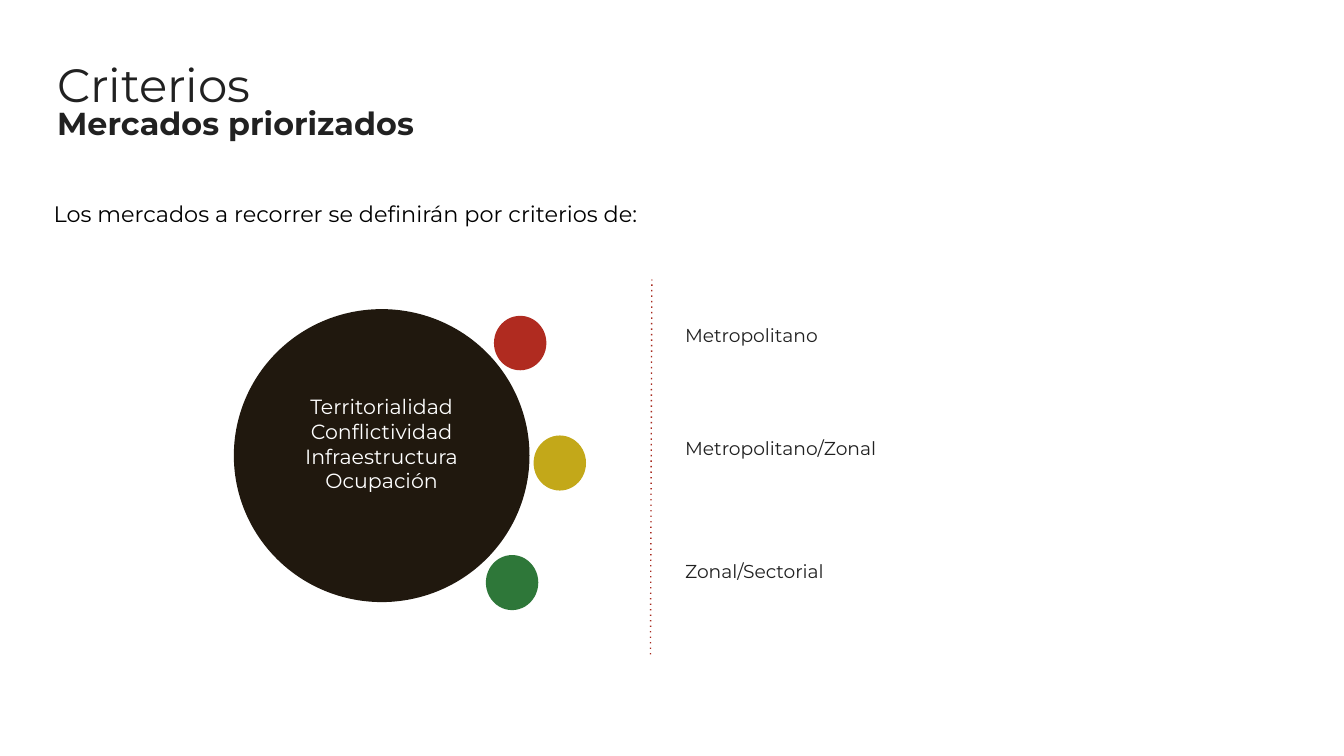
import pptx
import pptx.util
import pptx.dml.color
import pptx.enum.shapes
import pptx.enum.text
import pptx.oxml.ns
from lxml import etree

RGB = pptx.dml.color.RGBColor
INK = RGB(0x21, 0x21, 0x21)
BLACK = RGB(0x00, 0x00, 0x00)
WHITE = RGB(0xFF, 0xFF, 0xFF)
BROWN = RGB(0x20, 0x18, 0x0E)
RED = RGB(0xB0, 0x2B, 0x20)
YELLOW = RGB(0xC3, 0xA8, 0x19)
GREEN = RGB(0x2E, 0x77, 0x39)
RULE = RGB(0xA7, 0x29, 0x1E)
FONT = "Montserrat"
PP_ALIGN = pptx.enum.text.PP_ALIGN
ANCHOR = pptx.enum.text.MSO_ANCHOR
qn = pptx.oxml.ns.qn

prs = pptx.Presentation()
prs.slide_width = pptx.util.Inches(10)
prs.slide_height = prs.slide_width * 9 // 16
CELL = prs.slide_width / 100  # square grid, 100 columns wide


def cells(*counts):
    return [round(n * CELL) for n in counts]


def write(shape, lines, inset, align=PP_ALIGN.LEFT, anchor=ANCHOR.TOP):
    """Fill a shape with one paragraph per (text, size, colour, bold)."""
    tf = shape.text_frame
    tf.word_wrap = True
    tf.auto_size = pptx.enum.text.MSO_AUTO_SIZE.NONE
    tf.vertical_anchor = anchor
    tf.margin_left = tf.margin_right = tf.margin_top = tf.margin_bottom = cells(inset)[0]
    tf.text = "\n".join(line[0] for line in lines)
    for p, (_, size, color, bold) in zip(tf.paragraphs, lines):
        p.alignment = align
        p.font.name = FONT
        p.font.size = pptx.util.Pt(size)
        p.font.color.rgb = color
        p.font.bold = bold
    return tf


s = prs.slides.add_slide(prs.slide_layouts[5])

# Title
title = s.shapes.title
title.left, title.top, title.width, title.height = cells(3, 3.7, 39.7, 8.2)
tf = write(title, [("Criterios", 25, INK, False),
                   ("Mercados priorizados", 17, INK, True)], 1.25)
for p in tf.paragraphs:
    p.line_spacing = 0.8

# Criteria circle with its three level dots
circles = []
for x, y, w, h, color in [(17.4, 23, 22, 21.8, BROWN),
                          (36.75, 23.5, 3.9, 4.05, RED),
                          (39.7, 32.4, 3.9, 4.1, YELLOW),
                          (36.15, 41.3, 3.9, 4.1, GREEN)]:
    sp = s.shapes.add_shape(pptx.enum.shapes.MSO_SHAPE.OVAL, *cells(x, y, w, h))
    sp.shadow.inherit = False
    sp.fill.solid()
    sp.fill.fore_color.rgb = color
    sp.line.fill.background()
    circles.append(sp)

criteria = ["Territorialidad", "Conflictividad", "Infraestructura", "Ocupación"]
tf = write(circles[0], [(c, 11, WHITE, False) for c in criteria], 1,
           PP_ALIGN.CENTER, ANCHOR.MIDDLE)
tf.margin_bottom = cells(2.8)[0]  # lifts the list above the centre

# Dotted divider
divider = s.shapes.add_connector(pptx.enum.shapes.MSO_CONNECTOR.STRAIGHT,
                                 *cells(48.4, 48.7, 48.5, 20.8))
divider.line.color.rgb = RULE
divider.line.width = pptx.util.Pt(0.75)
spPr = divider._element.spPr
etree.SubElement(spPr.find(qn("a:ln")), qn("a:prstDash")).set("val", "dot")
etree.SubElement(spPr, qn("a:effectLst"))

# Level labels and introduction
for text, x, y, w, h, size, color in [
        ("Metropolitano", 50, 23.1, 16.4, 3.7, 10, INK),
        ("Metropolitano/Zonal", 50, 31.5, 20.8, 3.7, 10, INK),
        ("Zonal/Sectorial", 50, 40.65, 20.8, 3.7, 10, INK),
        ("Los mercados a recorrer se definirán por criterios de:",
         3, 13.9, 47.1, 4, 12, BLACK)]:
    write(s.shapes.add_textbox(*cells(x, y, w, h)), [(text, size, color, False)], 1)

prs.save("out.pptx")
